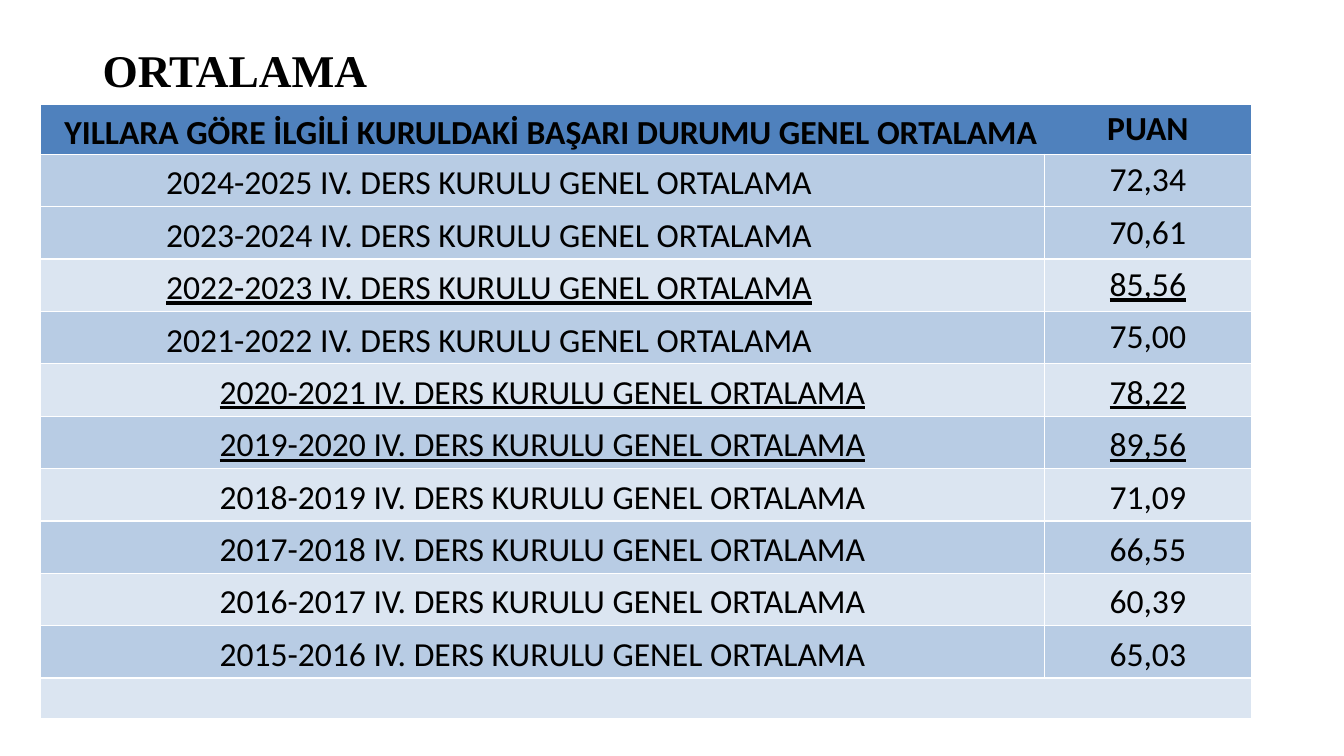
import pptx
import pptx.dml.color
import pptx.enum.text
import pptx.oxml
import pptx.oxml.ns
import pptx.util
from dataclasses import dataclass

Inches = pptx.util.Inches
Align = pptx.enum.text.PP_ALIGN
Anchor = pptx.enum.text.MSO_ANCHOR


@dataclass
class Theme:
    title_font: str = "Times New Roman"
    table_font: str = "Calibri"
    title_size: float = 32.4
    table_size: float = 24
    ink: str = "000000"
    border: str = "FFFFFF"
    header: str = "4F81BD"
    dark_band: str = "B8CCE4"
    light_band: str = "DBE5F1"


class ScoreSlide:
    def __init__(self, deck, theme):
        self.theme = theme
        self.slide = deck.slides.add_slide(deck.slide_layouts[6])

    def set_text(self, frame, text, font, size, bold=False, underline=False,
                 align=Align.LEFT, spacing=1.0):
        para = frame.paragraphs[0]
        para.text = text
        para.alignment = align
        para.line_spacing = spacing
        for span in para.runs:
            span.font.name = font
            span.font.size = pptx.util.Pt(size)
            span.font.bold = bold
            span.font.underline = underline
            span.font.color.rgb = pptx.dml.color.RGBColor.from_string(self.theme.ink)

    def title(self, text, left, top, width, height):
        box = self.slide.shapes.add_textbox(
            Inches(left), Inches(top), Inches(width), Inches(height))
        frame = box.text_frame
        frame.word_wrap = True
        frame.vertical_anchor = Anchor.MIDDLE
        self.set_text(frame, text, self.theme.title_font, self.theme.title_size,
                      bold=True, spacing=0.9)

    def table(self, left, top, widths, heights):
        frame = self.slide.shapes.add_table(
            len(heights), len(widths), Inches(left), Inches(top),
            Inches(sum(widths)), Inches(sum(heights)))
        table = frame.table
        table.first_row = table.horz_banding = False
        for column, width in zip(table.columns, widths):
            column.width = Inches(width)
        for row, height in zip(table.rows, heights):
            row.height = Inches(height)
        return table

    def paint(self, cell, fill, open_side=None):
        """Give the cell its borders, except on open_side, and then its fill."""
        properties = cell._tc.get_or_add_tcPr()
        for side in "LRTB":
            line = (f'<a:solidFill><a:srgbClr val="{self.theme.border}"/></a:solidFill>'
                    if side != open_side else "<a:noFill/>")
            properties.append(pptx.oxml.parse_xml(
                f'<a:ln{side} {pptx.oxml.ns.nsdecls("a")} w="12700">{line}</a:ln{side}>'))
        cell.fill.solid()
        cell.fill.fore_color.rgb = pptx.dml.color.RGBColor.from_string(fill)

    def cell(self, cell, text, fill, open_side=None, right_inset=0.07, **style):
        cell.margin_left, cell.margin_right = Inches(0.07), Inches(right_inset)
        cell.margin_top = cell.margin_bottom = 0
        cell.vertical_anchor = Anchor.MIDDLE
        self.paint(cell, fill, open_side)
        self.set_text(cell.text_frame, text, self.theme.table_font,
                      self.theme.table_size, **style)


def main():
    deck = pptx.Presentation()
    deck.slide_width, deck.slide_height = Inches(13.33), Inches(7.5)
    theme = Theme()
    page = ScoreSlide(deck, theme)
    page.title("ORTALAMA", 0.92, 0.4, 11.5, 0.64)

    scores = ["72,34", "70,61", "85,56", "75,00", "78,22",
              "89,56", "71,09", "66,55", "60,39", "65,03"]
    latest_year = 2024
    underlined_years = {2022, 2020, 2019}
    first_shifted_year = 2021  # from this year on, labels sit left of centre

    table = page.table(0.4, 1.04, [9.96, 2.05],
                       [0.49] + [0.52] * len(scores) + [0.4])
    page.cell(table.cell(0, 0),
              "YILLARA GÖRE İLGİLİ KURULDAKİ BAŞARI DURUMU GENEL ORTALAMA",
              theme.header, open_side="R", bold=True, align=Align.RIGHT, spacing=1.15)
    page.cell(table.cell(0, 1), "PUAN", theme.header, open_side="L",
              bold=True, align=Align.CENTER)

    for row, score in enumerate(scores, start=1):
        year = latest_year + 1 - row
        shifted = year >= first_shifted_year
        fill = theme.light_band if row > 1 and row % 2 else theme.dark_band
        style = dict(fill=fill, underline=year in underlined_years, align=Align.CENTER)
        page.cell(table.cell(row, 0),
                  f"{year}-{year + 1} IV. DERS KURULU GENEL ORTALAMA",
                  right_inset=1.13 if shifted else 0.07, spacing=1.15, **style)
        page.cell(table.cell(row, 1), score,
                  spacing=1.0 if shifted else 1.15, **style)

    footer = table.cell(len(scores) + 1, 0)
    footer.merge(table.cell(len(scores) + 1, 1))
    page.paint(footer, theme.light_band)
    deck.save("out.pptx")


if __name__ == "__main__":
    main()
